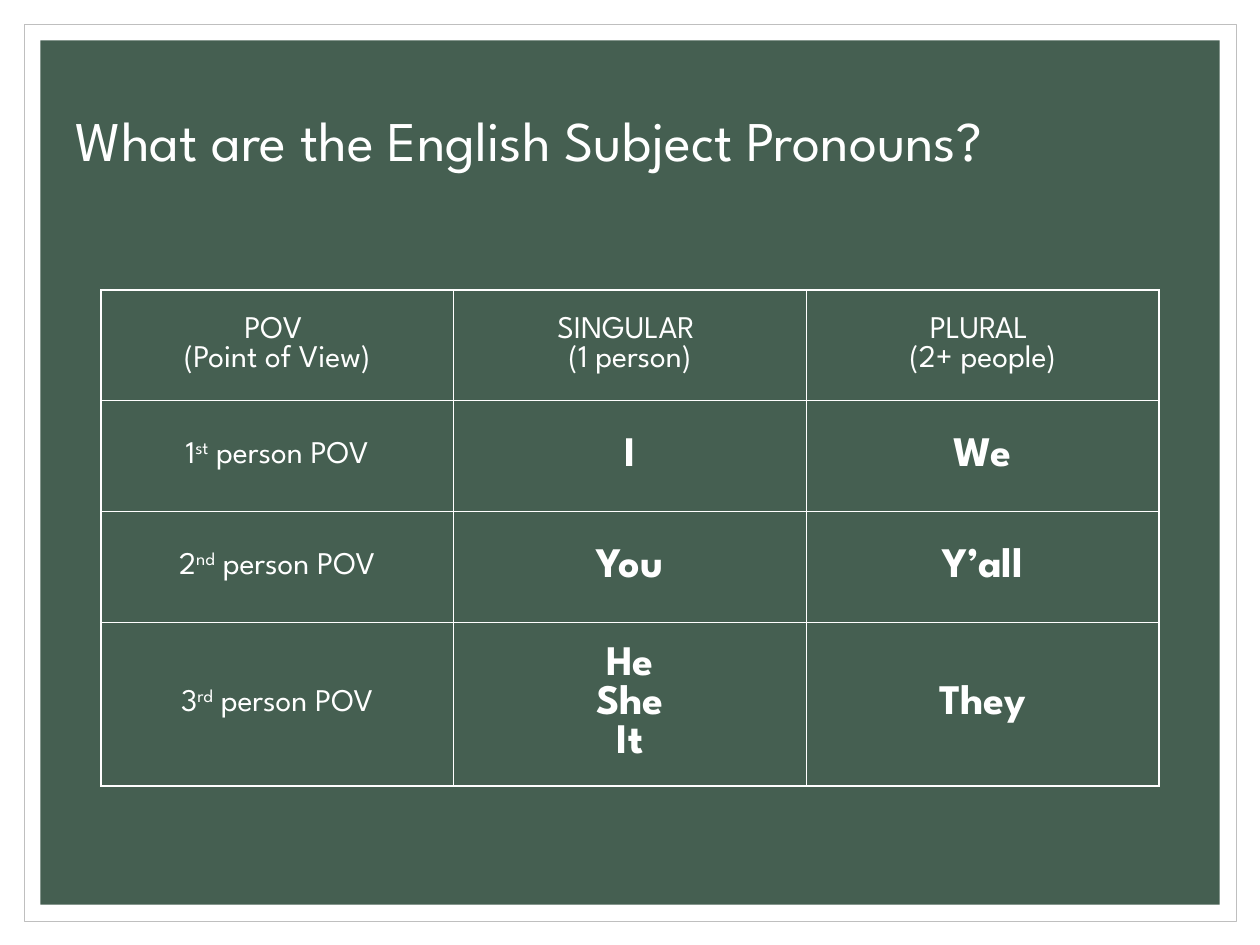
import pptx
import pptx.dml.color
import pptx.enum.shapes
import pptx.enum.text
import pptx.oxml
import pptx.oxml.ns
import pptx.util
from pptx.util import Inches

FONT = "League Spartan"
WHITE, GREEN, GRAY = "FFFFFF", "455F51", "BFBFBF"
COLUMN_WIDTH = 2.8
ROW_HEIGHTS = [0.88, 0.88, 0.88, 1.3]

HEADINGS = ["POV \n(Point of View)", "SINGULAR \n(1 person)", "PLURAL \n(2+ people)"]
# Ordinal number, its suffix, singular pronouns, plural pronoun
PRONOUNS = [
    ("1", "st", ["I"], "We"),
    ("2", "nd", ["You"], "Y’all"),
    ("3", "rd", ["He", "She", "It"], "They"),
]


def color(hex_string):
    return pptx.dml.color.RGBColor.from_string(hex_string)


def add_text(paragraph, text, size=18, bold=False, superscript=False):
    """Add text to a paragraph; a newline becomes a line break."""
    for index, line in enumerate(text.split("\n")):
        if index:
            paragraph.add_line_break()
        run = paragraph.add_run()
        run.text = line
        run.font.name = FONT
        run.font.size = pptx.util.Pt(size)
        run.font.bold = bold
        run.font.color.rgb = color(WHITE)
        if superscript:
            run.font._element.set("baseline", "30000")


def add_panel(slide, margin, fill, line=None):
    """Add a rectangle inset by the same margin on all sides of the slide."""
    shape = slide.shapes.add_shape(
        pptx.enum.shapes.MSO_SHAPE.RECTANGLE,
        Inches(margin), Inches(margin),
        Inches(10 - 2 * margin), Inches(7.5 - 2 * margin))
    shape.shadow.inherit = False
    shape.fill.solid()
    shape.fill.fore_color.rgb = color(fill)
    if line:
        shape.line.color.rgb = color(line)
        shape.line.width = pptx.util.Pt(0.5)
    else:
        shape.line.fill.background()


def add_title(slide, text):
    title = slide.shapes.title
    title.left, title.top = Inches(0.5), Inches(0.7)
    title.width, title.height = Inches(8.7), Inches(0.88)
    frame = title.text_frame
    frame.auto_size = pptx.enum.text.MSO_AUTO_SIZE.NONE
    frame.vertical_anchor = pptx.enum.text.MSO_ANCHOR.MIDDLE
    paragraph = frame.paragraphs[0]
    paragraph.alignment = pptx.enum.text.PP_ALIGN.LEFT
    paragraph.line_spacing = 0.9
    add_text(paragraph, text, size=32)
    # Bring the title in front of the panels
    slide.shapes._spTree.append(title._element)


def format_cell(cell):
    """Center the cell's text and draw white borders without a fill."""
    cell.vertical_anchor = pptx.enum.text.MSO_ANCHOR.MIDDLE
    properties = cell._tc.get_or_add_tcPr()
    for side in ("lnL", "lnR", "lnT", "lnB"):
        properties.append(pptx.oxml.parse_xml(
            f'<a:{side} {pptx.oxml.ns.nsdecls("a")} w="12700"><a:solidFill>'
            f'<a:srgbClr val="{WHITE}"/></a:solidFill></a:{side}>'))
    cell.fill.background()
    for paragraph in cell.text_frame.paragraphs:
        paragraph.alignment = pptx.enum.text.PP_ALIGN.CENTER


def add_pronouns(cell, pronouns):
    frame = cell.text_frame
    for index, pronoun in enumerate(pronouns):
        paragraph = frame.add_paragraph() if index else frame.paragraphs[0]
        add_text(paragraph, pronoun, size=24, bold=True)


def add_pronoun_table(slide):
    table = slide.shapes.add_table(
        len(ROW_HEIGHTS), len(HEADINGS), Inches(0.8), Inches(2.3),
        Inches(COLUMN_WIDTH * len(HEADINGS)), Inches(sum(ROW_HEIGHTS))).table
    table.first_row = table.horz_banding = False
    for column in table.columns:
        column.width = Inches(COLUMN_WIDTH)
    for row, height in zip(table.rows, ROW_HEIGHTS):
        row.height = Inches(height)

    # Heading row
    for index, heading in enumerate(HEADINGS):
        add_text(table.cell(0, index).text_frame.paragraphs[0], heading)

    # One row for each person
    for row, (number, suffix, singular, plural) in enumerate(PRONOUNS, start=1):
        label = table.cell(row, 0).text_frame.paragraphs[0]
        add_text(label, number)
        add_text(label, suffix, superscript=True)
        add_text(label, " person POV")
        add_pronouns(table.cell(row, 1), singular)
        add_pronouns(table.cell(row, 2), [plural])

    for cell in table.iter_cells():
        format_cell(cell)


def main():
    presentation = pptx.Presentation()
    presentation.slide_width = Inches(10)
    presentation.slide_height = Inches(7.5)
    slide = presentation.slides.add_slide(presentation.slide_layouts[5])

    # Framed background
    add_panel(slide, 0.19, WHITE, line=GRAY)
    add_panel(slide, 0.32, GREEN)

    # Content
    add_title(slide, "What are the English Subject Pronouns?")
    add_pronoun_table(slide)
    presentation.save("out.pptx")


if __name__ == "__main__":
    main()
